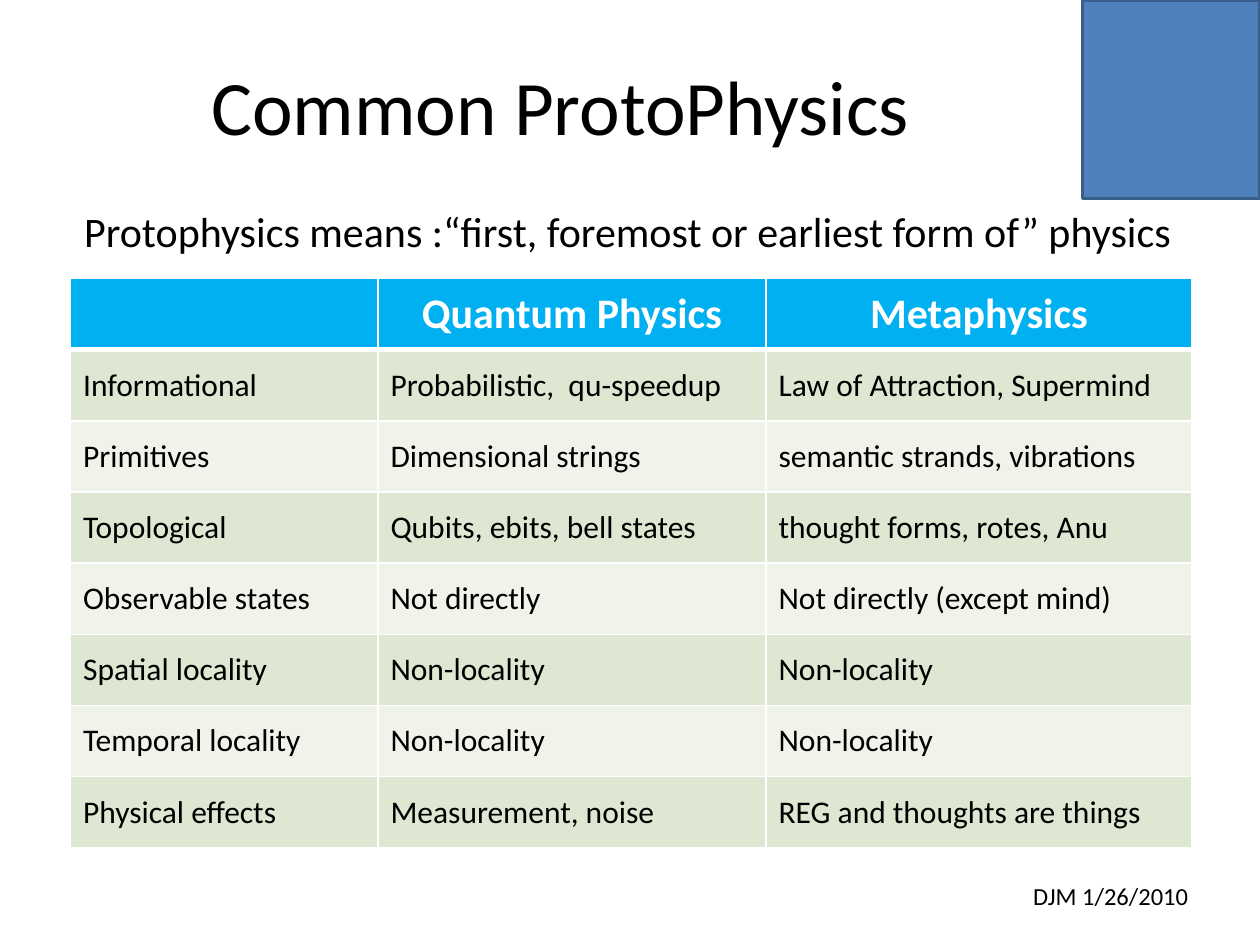
from lxml.etree import SubElement
from pptx import Presentation
from pptx.dml.color import RGBColor
from pptx.enum.shapes import MSO_SHAPE as Shape
from pptx.enum.text import MSO_ANCHOR as Anchor, PP_ALIGN as Align
from pptx.oxml.ns import qn
from pptx.util import Inches, Pt

WIDTH, HEIGHT = 10, 7.5
FONT = "Calibri"
COLORS = {
    "black": "000000", "white": "FFFFFF", "header": "00B0F0",
    "odd_row": "DEE7D1", "even_row": "EFF3EA",
    "block": "4F81BD", "block_edge": "3A5F8C",
}
COLUMN_WIDTHS = [2.44, 3.08, 3.38]
ROW_HEIGHT = 0.565
ROWS = [
    ["", "Quantum Physics", "Metaphysics"],
    ["Informational", "Probabilistic,  qu-speedup", "Law of Attraction, Supermind"],
    ["Primitives", "Dimensional strings", "semantic strands, vibrations"],
    ["Topological", "Qubits, ebits, bell states", "thought forms, rotes, Anu"],
    ["Observable states", "Not directly", "Not directly (except mind)"],
    ["Spatial locality", "Non-locality", "Non-locality"],
    ["Temporal locality", "Non-locality", "Non-locality"],
    ["Physical effects", "Measurement, noise", "REG and thoughts are things"],
]


def color(name):
    return RGBColor.from_string(COLORS[name])


def style_paragraph(paragraph, size, color_name="black", align=Align.LEFT, bold=False):
    paragraph.alignment = align
    font = paragraph.font
    font.name, font.size, font.bold = FONT, Pt(size), bold
    font.color.rgb = color(color_name)


def add_text(slide, text, box, size, align=Align.LEFT, anchor=Anchor.TOP):
    shape = slide.shapes.add_textbox(*map(Inches, box))
    frame = shape.text_frame
    frame.word_wrap = True
    frame.vertical_anchor = anchor
    frame.text = text
    style_paragraph(frame.paragraphs[0], size, align=align)


def add_corner_block(slide):
    width, height = 0.141 * WIDTH, 0.21 * HEIGHT
    block = slide.shapes.add_shape(
        Shape.RECTANGLE, Inches(WIDTH - width), 0, Inches(width), Inches(height))
    block.shadow.inherit = False
    block.fill.solid()
    block.fill.fore_color.rgb = color("block")
    block.line.color.rgb = color("block_edge")
    block.line.width = Pt(2)


def add_cell_borders(cell, top, bottom):
    properties = cell._tc.get_or_add_tcPr()
    for side, points in (("L", 1), ("R", 1), ("T", top), ("B", bottom)):
        line = SubElement(properties, qn(f"a:ln{side}"), w=str(Pt(points)))
        fill = SubElement(line, qn("a:solidFill"))
        SubElement(fill, qn("a:srgbClr"), val=COLORS["white"])


def style_cell(cell, row):
    is_header = row == 0
    cell.vertical_anchor = Anchor.MIDDLE
    # The rule under the header is thicker than the others
    add_cell_borders(cell, top=3 if row == 1 else 1, bottom=3 if is_header else 1)
    fill_name = "header" if is_header else "odd_row" if row % 2 else "even_row"
    cell.fill.solid()
    cell.fill.fore_color.rgb = color(fill_name)
    paragraph = cell.text_frame.paragraphs[0]
    if is_header:
        style_paragraph(paragraph, 24, "white", Align.CENTER, bold=True)
    else:
        style_paragraph(paragraph, 18)


def add_comparison_table(slide, left, top):
    frame = slide.shapes.add_table(
        len(ROWS), len(COLUMN_WIDTHS), Inches(left), Inches(top),
        Inches(sum(COLUMN_WIDTHS)), Inches(ROW_HEIGHT * len(ROWS)))
    table = frame.table
    for column, width in zip(table.columns, COLUMN_WIDTHS):
        column.width = Inches(width)
    for row, texts in enumerate(ROWS):
        table.rows[row].height = Inches(ROW_HEIGHT)
        for column, text in enumerate(texts):
            cell = table.cell(row, column)
            cell.text = text
            style_cell(cell, row)


def main():
    presentation = Presentation()
    presentation.slide_width, presentation.slide_height = Inches(WIDTH), Inches(HEIGHT)
    slide = presentation.slides.add_slide(presentation.slide_layouts[6])

    # Corner decoration and date line
    add_corner_block(slide)
    add_text(slide, "DJM 1/26/2010", (7.62, 6.94, 1.91, 0.34), 14, Align.RIGHT)

    # Title
    add_text(slide, "Common ProtoPhysics", (0.47, 0.39, 7.96, 0.88), 44,
             Align.CENTER, Anchor.MIDDLE)

    # Comparison table and the definition above it
    add_comparison_table(slide, 0.56, 2.21)
    add_text(slide, "Protophysics means :“first, foremost or earliest form of” physics",
             (0.57, 1.58, 8.97, 0.5), 24)

    presentation.save("out.pptx")


if __name__ == "__main__":
    main()
